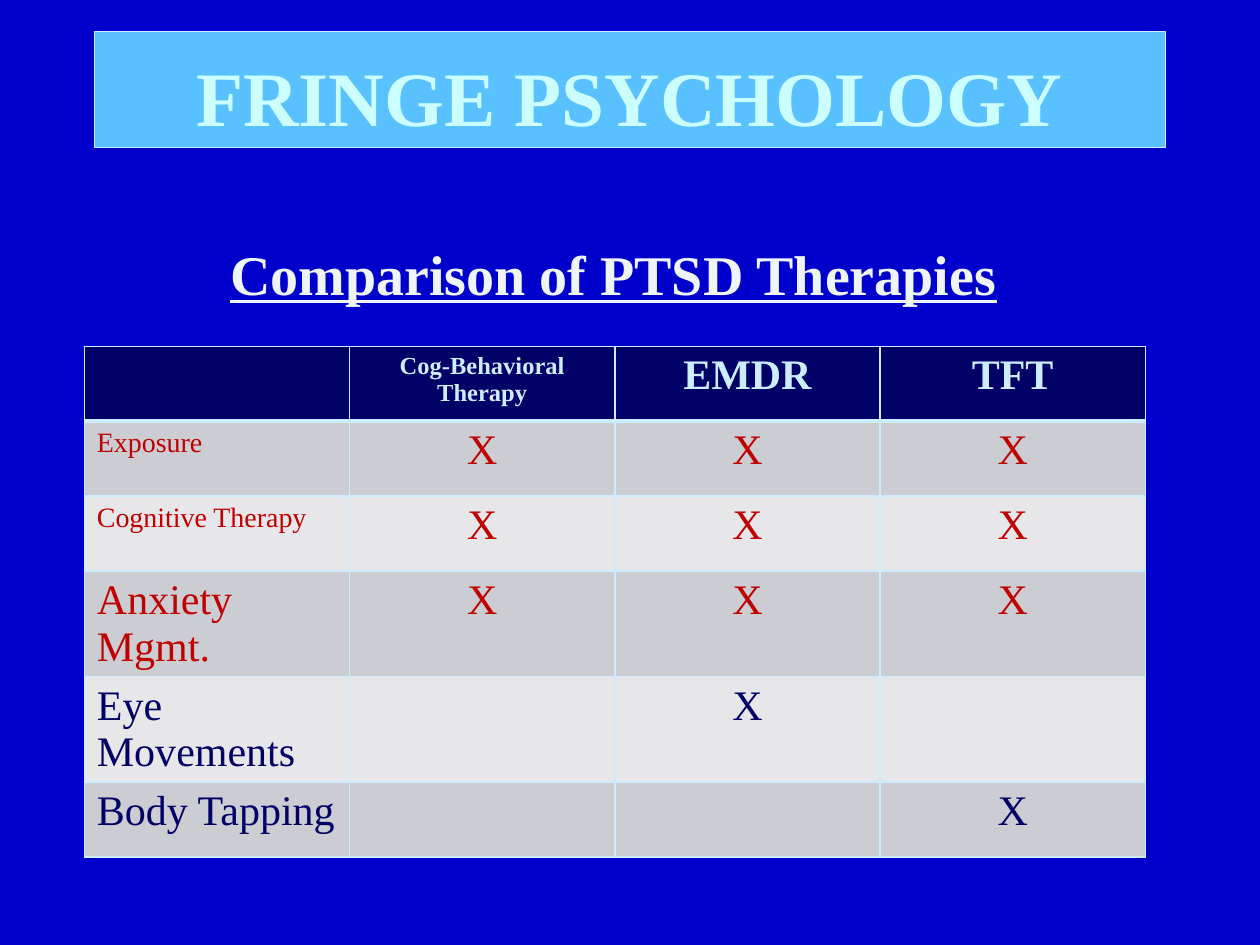
from lxml import etree
from pptx import Presentation
from pptx.dml.color import RGBColor
from pptx.enum.text import MSO_ANCHOR, MSO_AUTO_SIZE, PP_ALIGN
from pptx.oxml.ns import qn
from pptx.util import Cm, Pt

LEFT, CENTER = PP_ALIGN.LEFT, PP_ALIGN.CENTER
MIDDLE, BOTTOM = MSO_ANCHOR.MIDDLE, MSO_ANCHOR.BOTTOM
NO_FIT = MSO_AUTO_SIZE.NONE

HUES = {
    "back": "0000CC", "bar": "59C1FF", "edge": "CCECFF", "title": "CCFFFF",
    "sub": "EFF4F8", "navy": "000066", "red": "C00000",
    "dark": "CCCCD3", "light": "E7E7EA",
}


def hue(name):
    return RGBColor.from_string(HUES[name])


class Deck:
    font = "Times New Roman"

    def __init__(self):
        self.prs = Presentation()
        self.prs.slide_width, self.prs.slide_height = Cm(25.4), Cm(19.05)
        self.slide = self.prs.slides.add_slide(self.prs.slide_layouts[0])
        fill = self.slide.background.fill
        fill.solid()
        fill.fore_color.rgb = hue("back")

    def label(self, frame, text, size, color, bold=False, align=CENTER, under=False):
        frame.text = text
        for para in frame.paragraphs:
            para.alignment = align
            para.space_before = Pt(0)
            for run in para.runs:
                font = run.font
                font.name, font.size = self.font, Pt(size)
                font.bold, font.underline = bold, under
                font.color.rgb = hue(color)

    def holder(self, index, box, anchor, text, size, color, under=False):
        shape = self.slide.placeholders[index]
        shape.left, shape.top, shape.width, shape.height = map(Cm, box)
        frame = shape.text_frame
        self.label(frame, text, size, color, bold=True, under=under)
        frame.auto_size, frame.vertical_anchor = NO_FIT, anchor
        return shape

    def border(self, cell, widths):
        props = cell._tc.get_or_add_tcPr()
        for spot, (side, width) in enumerate(widths.items()):
            line = etree.Element(qn(f"a:ln{side}"), w=str(Pt(width)))
            solid = etree.SubElement(line, qn("a:solidFill"))
            etree.SubElement(solid, qn("a:srgbClr"), val=HUES["edge"])
            props.insert(spot, line)

    def cell(self, cell, fill, widths, *style, **extra):
        cell.fill.solid()
        cell.fill.fore_color.rgb = hue(fill)
        self.border(cell, widths)
        self.label(cell.text_frame, *style, **extra)

    def table(self, box, heads, rows):
        left, top, width, high = box
        grid = self.slide.shapes.add_table(
            len(rows) + 1, len(heads), Cm(left), Cm(top),
            Cm(width), Cm(high * (len(rows) + 1))).table

        # Header row, with a thick rule below
        for col, (text, size) in enumerate(heads):
            self.cell(grid.cell(0, col), "navy", {"L": 1, "R": 1, "T": 1, "B": 3},
                      text, size, "edge", bold=True)

        # Banded body rows
        for row, (name, size, color, marks) in enumerate(rows, 1):
            fill = "dark" if row % 2 else "light"
            widths = {"L": 1, "R": 1, "T": 3 if row == 1 else 1, "B": 1}
            self.cell(grid.cell(row, 0), fill, widths, name, size, color, align=LEFT)
            for col, mark in enumerate(marks, 1):
                self.cell(grid.cell(row, col), fill, widths, mark, 24, color)


def main():
    deck = Deck()

    # Title bar
    bar = deck.holder(0, (1.9, 0.64, 21.59, 2.34), BOTTOM,
                      "FRINGE PSYCHOLOGY", 44, "title")
    bar.fill.solid()
    bar.fill.fore_color.rgb = hue("bar")
    bar.line.color.rgb = hue("edge")
    bar.line.width = Pt(0.75)

    # Therapy grid
    heads = [("", 24), ("Cog-Behavioral\nTherapy", 14), ("EMDR", 24), ("TFT", 24)]
    rows = [
        ("Exposure", 16, "red", ("X", "X", "X")),
        ("Cognitive Therapy", 16, "red", ("X", "X", "X")),
        ("Anxiety Mgmt.", 24, "red", ("X", "X", "X")),
        ("Eye Movements", 24, "navy", ("", "X", "")),
        ("Body Tapping", 24, "navy", ("", "", "X")),
    ]
    deck.table((1.7, 6.98, 21.39, 1.51), heads, rows)

    # Subtitle
    deck.holder(1, (0.84, 4.66, 23.06, 1.69), MIDDLE,
                "Comparison of PTSD Therapies", 32, "sub", under=True)

    deck.prs.save("out.pptx")


if __name__ == "__main__":
    main()
